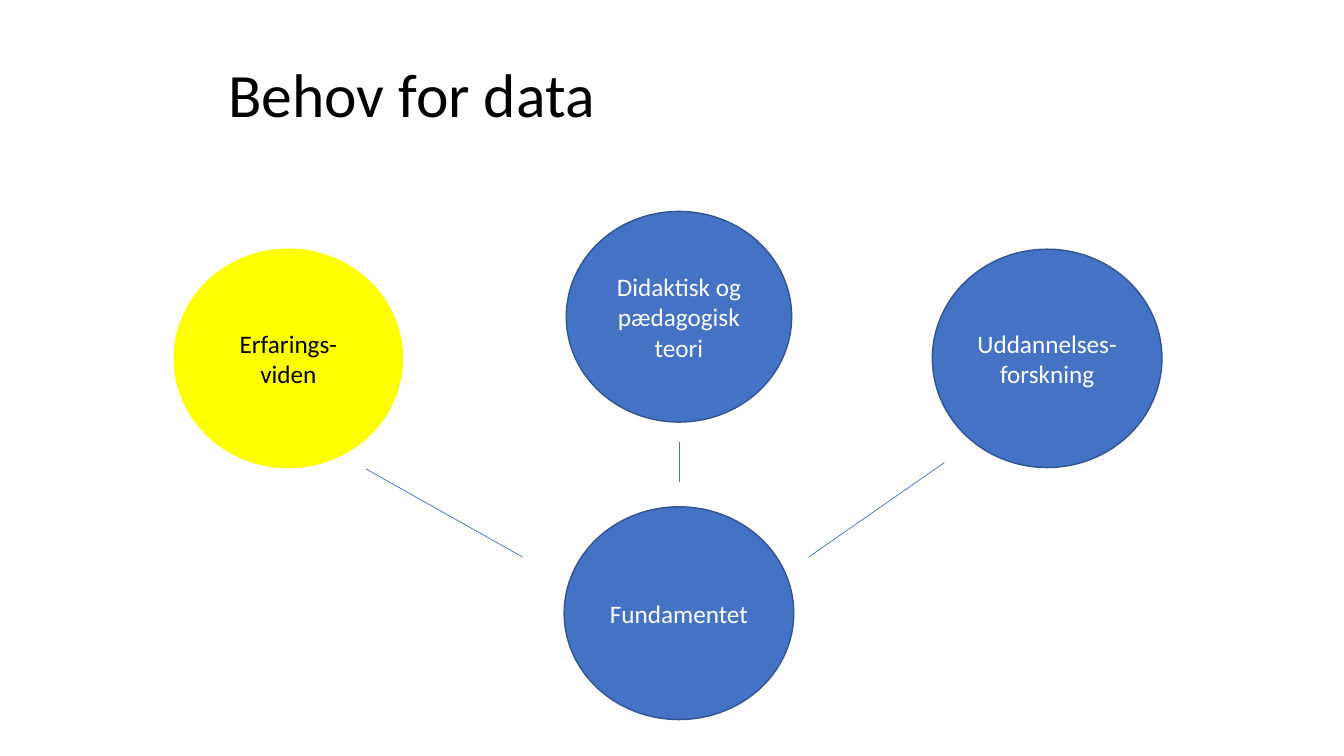
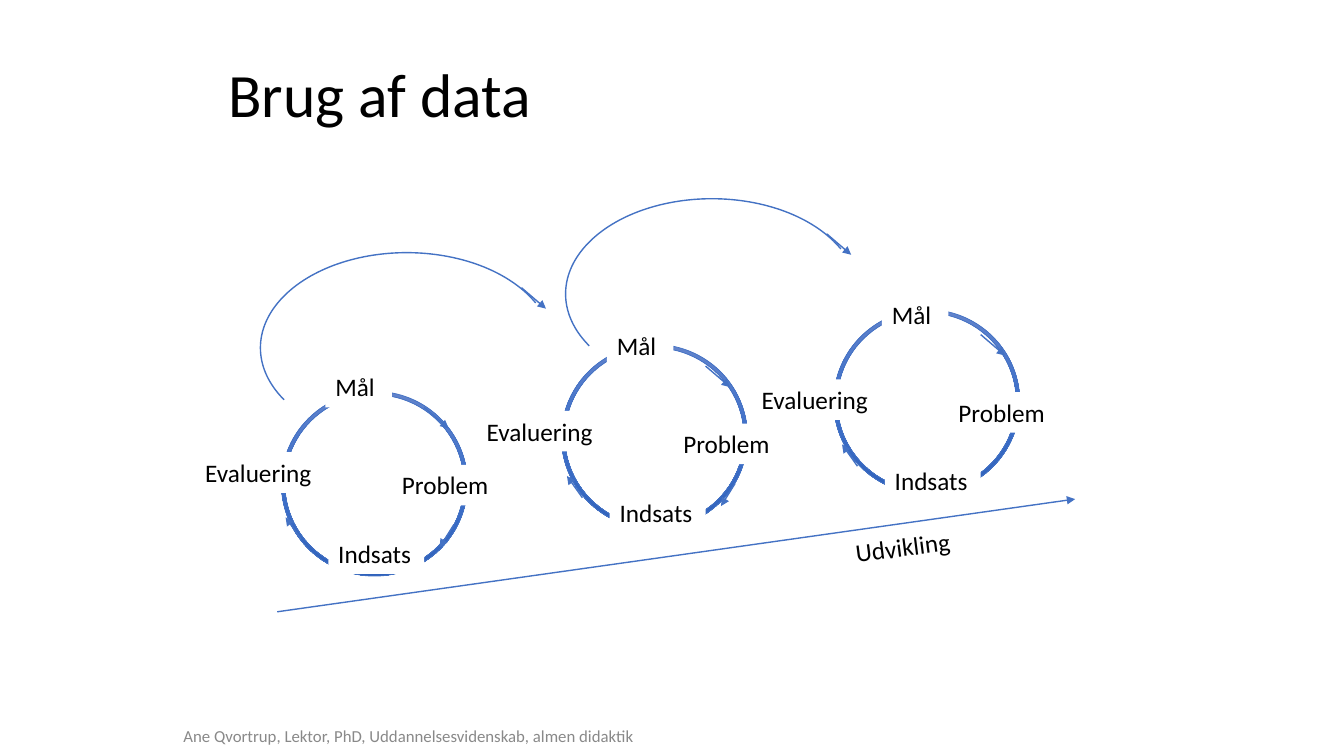
from copy import deepcopy

from lxml import etree
from pptx import Presentation
from pptx.dml.color import RGBColor
from pptx.enum.shapes import MSO_CONNECTOR, MSO_SHAPE
from pptx.enum.text import MSO_ANCHOR, PP_ALIGN
from pptx.oxml.ns import qn
from pptx.util import Pt

OVAL, RECT = MSO_SHAPE.OVAL, MSO_SHAPE.RECTANGLE
DONUT, ARC = MSO_SHAPE.DONUT, MSO_SHAPE.ARC
STRAIGHT = MSO_CONNECTOR.STRAIGHT
LEFT, CENTER = PP_ALIGN.LEFT, PP_ALIGN.CENTER
TOP, MIDDLE = MSO_ANCHOR.TOP, MSO_ANCHOR.MIDDLE


class Theme:
    font = "Calibri"
    white, black = "FFFFFF", "000000"
    blue, navy, yellow, gray = "4472C4", "325491", "FFFF00", "898989"
    ring = ("6183CB", "3E70CA", "3062BB")
    title, body, foot = 44, 18, 12
    thin, line = 0.5, 1


def put(slide, kind, box, text="", fill=None, edge=None, width=Theme.line,
        color=Theme.black, size=Theme.body, align=LEFT, anchor=TOP):
    """Add a shape, or a text box if kind is None, with its style and text."""
    box = [Pt(v) for v in box]
    if kind is None:
        shape = slide.shapes.add_textbox(*box)
    else:
        shape = slide.shapes.add_shape(kind, *box)
        shape.shadow.inherit = False
        if fill:
            shape.fill.solid()
            shape.fill.fore_color.rgb = RGBColor.from_string(fill)
        else:
            shape.fill.background()
        if edge:
            shape.line.color.rgb = RGBColor.from_string(edge)
            shape.line.width = Pt(width)
        else:
            shape.line.fill.background()
    if text:
        frame = shape.text_frame
        frame.text = text
        frame.word_wrap = True
        frame.vertical_anchor = anchor
        para = frame.paragraphs[0]
        para.alignment = align
        for run in para.runs:
            run.font.name = Theme.font
            run.font.size = Pt(size)
            run.font.color.rgb = RGBColor.from_string(color)
    return shape


def draw(slide, ends, x=0, y=0, width=Theme.line, arrow=True):
    """Add a straight line whose ends are measured from x, y."""
    x1, y1, x2, y2 = ends
    line = slide.shapes.add_connector(
        STRAIGHT, Pt(x + x1), Pt(y + y1), Pt(x + x2), Pt(y + y2))
    line.line.color.rgb = RGBColor.from_string(Theme.blue)
    line.line.width = Pt(width)
    props = line._element.spPr
    if arrow:
        etree.SubElement(props.find(qn("a:ln")), qn("a:tailEnd"), type="triangle")
    etree.SubElement(props, qn("a:effectLst"))


deck = Presentation()
deck.slide_width, deck.slide_height = Pt(960), Pt(540)
slides = []
for title in ("Behov for data", "Brug af data"):
    slide = deck.slides.add_slide(deck.slide_layouts[6])
    put(slide, None, (156, 21.5, 648, 90), title, size=Theme.title, anchor=MIDDLE)
    slides.append(slide)
needs, usage = slides

# Sources of knowledge around the foundation
blue = (Theme.blue, Theme.navy, Theme.white)
gold = (Theme.yellow, Theme.yellow, Theme.black)
for box, text, (fill, edge, color) in (
    ((403, 362, 164, 152), "Fundamentet", blue),
    ((666, 178, 164, 156), "Uddannelses-\vforskning", blue),
    ((404.5, 151, 161, 150.5), "Didaktisk og pædagogisk teori", blue),
    ((124.5, 178, 163, 156), "Erfarings-viden", gold),
):
    put(needs, OVAL, box, text, fill, edge, color=color, align=CENTER, anchor=MIDDLE)

for ends in (
    (261.5, 335, 373.5, 398),
    (674.5, 330.5, 577.5, 398),
    (485.5, 315.5, 485.5, 344.5),
):
    draw(needs, ends, width=Theme.thin, arrow=False)

# Rising line of development
put(usage, None, (120, 511, 344, 29),
    "Ane Qvortrup, Lektor, PhD, Uddannelsesvidenskab, almen didaktik",
    color=Theme.gray, size=Theme.foot, align=CENTER, anchor=MIDDLE)
draw(usage, (198, 437, 768, 356.5))
put(usage, None, (603.5, 371, 163.5, 29), "Udvikling").rotation = 352.7

# Each cycle: ring corner, then the corner its labels and arrows start from
steps = (
    ("Mål", 0, 0, 47.5),
    ("Problem", 47.5, 70, 93),
    ("Indsats", 2, 119, 68.5),
    ("Evaluering", -93, 61, 93),
)
turns = (
    (70.5, 29, 88, 44),
    (-17.5, 123, -28.5, 107.5),
    (91.5, 113, 81.5, 129),
)
for ring, (x, y), count in (
    ((201, 279.5), (232.5, 262), 3),
    ((401, 246), (433.5, 232.5), 3),
    ((595.5, 221), (630, 210), 2),
):
    donut = put(usage, DONUT, (*ring, 133, 132), edge=Theme.blue, width=Theme.thin)
    donut.adjustments[0] = 0.019
    donut.fill.gradient()
    donut.fill.gradient_angle = 270
    stops = donut._element.spPr.find(qn("a:gradFill")).find(qn("a:gsLst"))
    stops.insert(1, deepcopy(stops[0]))
    for i, stop in enumerate(donut.fill.gradient_stops):
        stop.position = i / 2
        stop.color.rgb = RGBColor.from_string(Theme.ring[i])
    for text, dx, dy, wide in steps:
        put(usage, RECT, (x + dx, y + dy, wide, 29), text, Theme.white)
    for ends in turns[:count]:
        draw(usage, ends, x, y)

# Leaps from one cycle to the next
for x, y in ((186, 180.5), (404, 142)):
    leap = put(usage, ARC, (x, y, 209, 136), edge=Theme.blue)
    for i, angle in enumerate((157.06, 340.77)):
        leap.adjustments[i] = angle * 0.6
    draw(usage, (186.5, 25, 204, 40), x, y)

deck.save("out.pptx")
